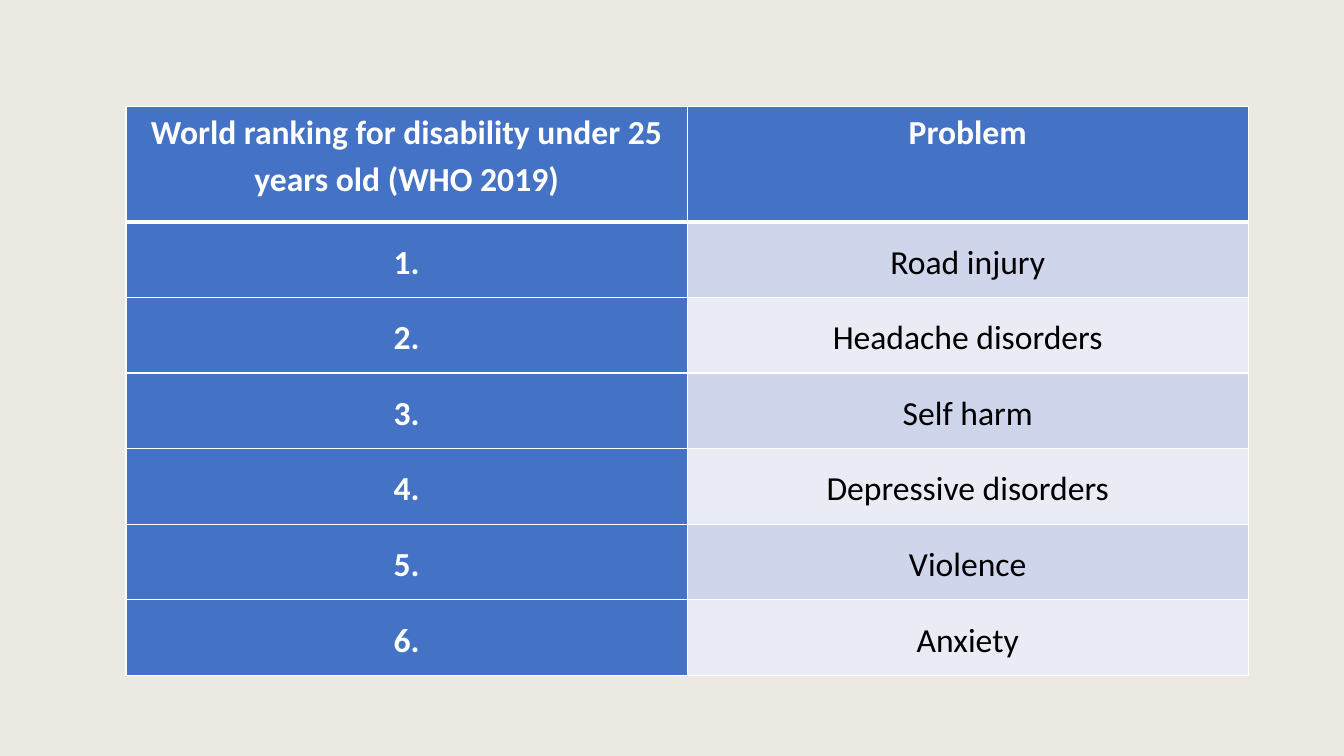
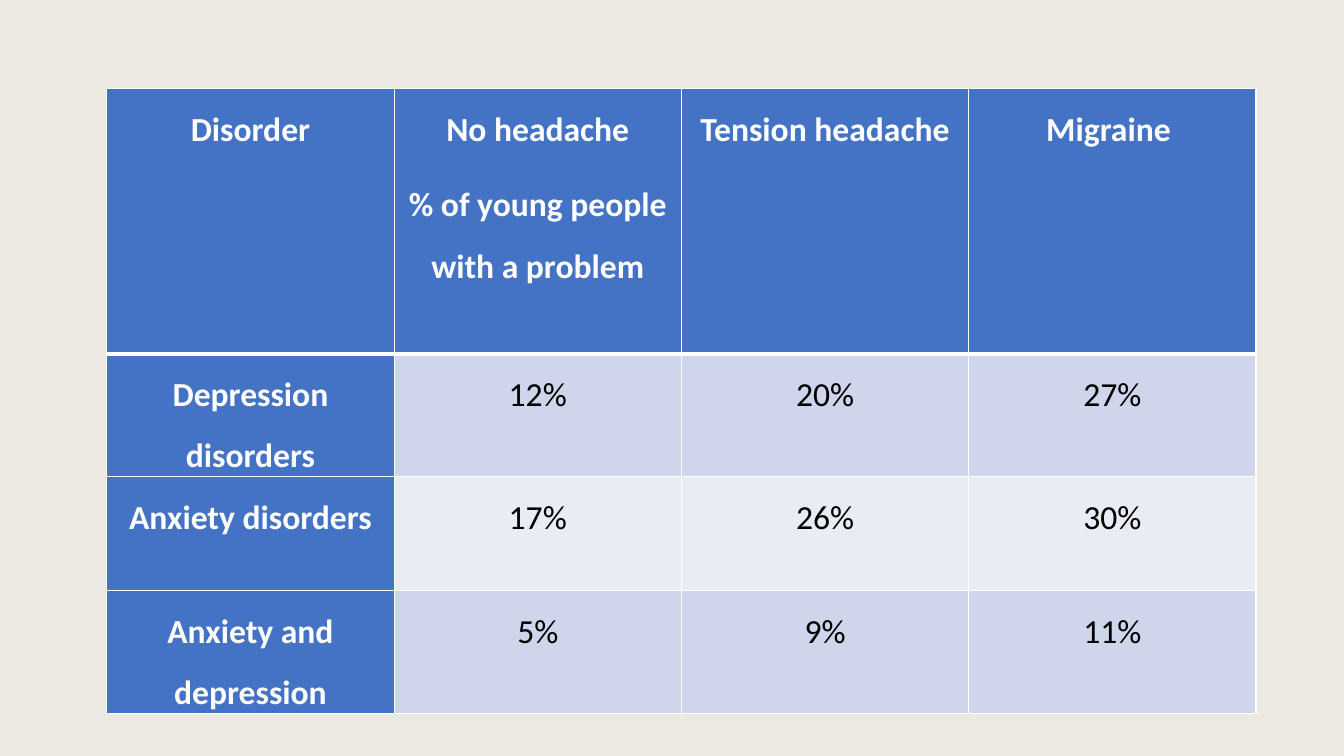
"""Build two slides of headache and disability tables."""
import dataclasses
import pptx
import pptx.dml.color
import pptx.enum.text
import pptx.oxml
import pptx.oxml.ns
import pptx.util


@dataclasses.dataclass(frozen=True)
class Theme:
    back: str = "ECE8E2"
    head: str = "4472C4"
    bands: tuple = ("CFD5EA", "E9EBF5")
    light: str = "FFFFFF"
    dark: str = "000000"
    font: str = "Calibri"
    size: int = 24
    thin: int = 1
    thick: int = 3
    pad: float = 0.07


THEME = Theme()
WIDE = pptx.util.Inches(13.33)
HIGH = pptx.util.Inches(7.5)


def across(share):
    return round(WIDE * share / 100)


def down(share):
    return round(HIGH * share / 100)


def color(code):
    return pptx.dml.color.RGBColor.from_string(code)


def add_edge(cell, side, width):
    props = cell._tc.get_or_add_tcPr()
    space = pptx.oxml.ns.nsdecls("a")
    props.append(pptx.oxml.parse_xml(
        f'<a:ln{side} {space} w="{pptx.util.Pt(width)}"><a:solidFill>'
        f'<a:srgbClr val="{THEME.light}"/></a:solidFill></a:ln{side}>'))


def add_text(cell, text, strong, lead, after):
    frame = cell.text_frame
    for spot, line in enumerate(text.split("\n")):
        para = frame.add_paragraph() if spot else frame.paragraphs[0]
        para.alignment = pptx.enum.text.PP_ALIGN.CENTER
        para.line_spacing = lead
        para.space_after = pptx.util.Pt(after)
        run = para.add_run()
        run.text = line
        run.font.name = THEME.font
        run.font.size = pptx.util.Pt(THEME.size)
        run.font.bold = strong
        run.font.color.rgb = color(THEME.light if strong else THEME.dark)


def style_cell(cell, row, col):
    cell.margin_left = cell.margin_right = pptx.util.Inches(THEME.pad)
    cell.margin_top = cell.margin_bottom = 0
    top = THEME.thick if row == 1 else THEME.thin
    base = THEME.thick if row == 0 else THEME.thin
    for side, width in (("L", THEME.thin), ("R", THEME.thin),
                        ("T", top), ("B", base)):
        add_edge(cell, side, width)
    cell.fill.solid()
    band = THEME.bands[(row - 1) % len(THEME.bands)]
    cell.fill.fore_color.rgb = color(band if row and col else THEME.head)


def add_grid(slide, data, left, top, width, first, rest, lead=1.5, after=10):
    highs = [down(first)] + [down(rest)] * (len(data) - 1)
    frame = slide.shapes.add_table(
        len(data), len(data[0]), across(left), down(top),
        across(width), sum(highs))
    table = frame.table
    table.first_row = table.horz_banding = False
    for row, high in zip(table.rows, highs):
        row.height = high
    for row, texts in enumerate(data):
        for col, text in enumerate(texts):
            cell = table.cell(row, col)
            style_cell(cell, row, col)
            space = (1.5, 10) if row else (lead, after)
            add_text(cell, text, not (row and col), *space)


def add_slide(deck):
    slide = deck.slides.add_slide(deck.slide_layouts[6])
    fill = slide.background.fill
    fill.solid()
    fill.fore_color.rgb = color(THEME.back)
    return slide


def main():
    deck = pptx.Presentation()
    deck.slide_width, deck.slide_height = WIDE, HIGH
    ills = ["Road injury", "Headache disorders", "Self harm",
            "Depressive disorders", "Violence", "Anxiety"]
    ranks = [("World ranking for disability under 25 years old (WHO 2019)",
              "Problem")]
    ranks += [(f"{rank}.", ill) for rank, ill in enumerate(ills, 1)]
    rates = [
        ("Disorder", "No headache\n% of young people with a problem",
         "Tension headache", "Migraine "),
        ("Depression disorders", "12%", "20%", "27%"),
        ("Anxiety disorders", "17%", "26%", "30%"),
        ("Anxiety and depression", "5%", "9%", "11%"),
    ]
    add_grid(add_slide(deck), ranks, left=9.38, top=14.13, width=83.5,
             first=15.2, rest=10, lead=1.15, after=0)
    add_grid(add_slide(deck), rates, left=7.95, top=11.73, width=85.5,
             first=35.07, rest=15.07)
    deck.save("out.pptx")


if __name__ == "__main__":
    main()
